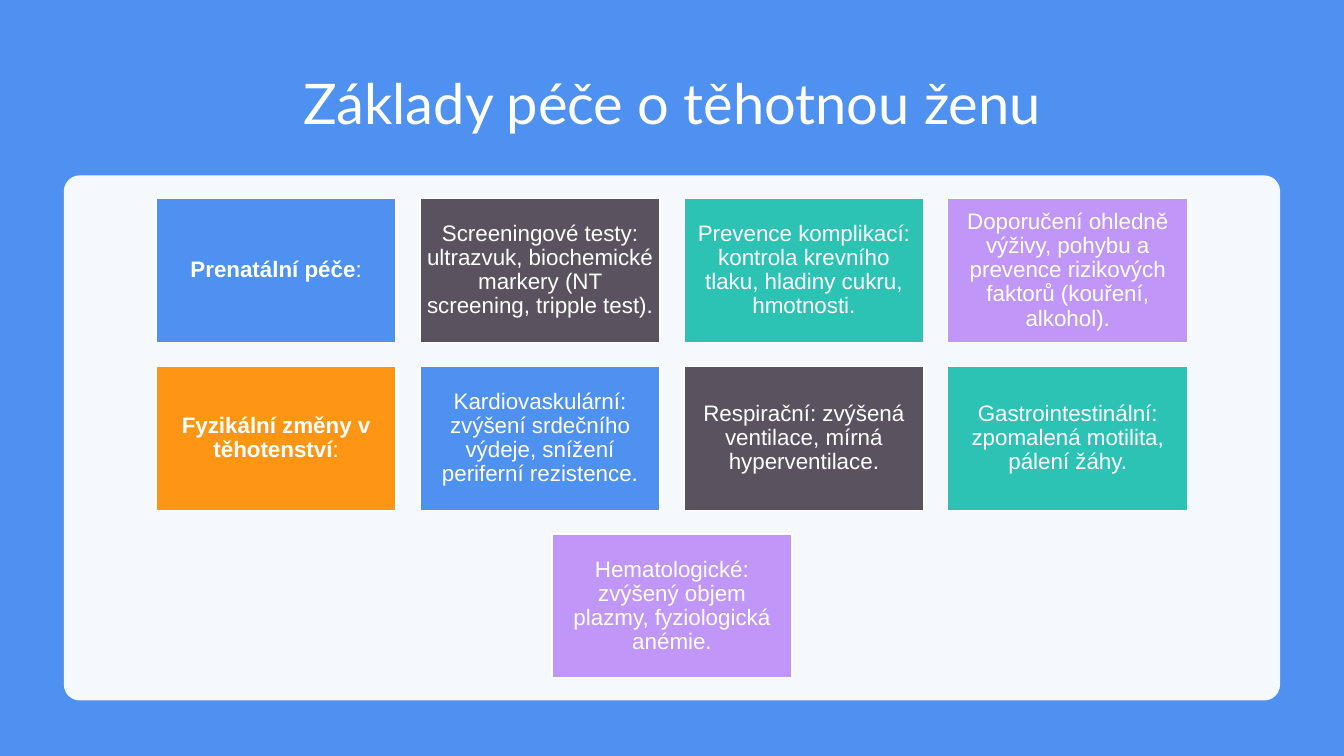
from itertools import cycle

from lxml.etree import SubElement
from pptx import Presentation
from pptx.dml.color import RGBColor
from pptx.enum.shapes import MSO_SHAPE as Shape
from pptx.enum.text import MSO_ANCHOR as Anchor, MSO_AUTO_SIZE as AutoSize, PP_ALIGN as Align
from pptx.oxml.ns import qn
from pptx.util import Cm, Pt

COLORS = {
    "white": "FFFFFF",
    "blue": "4E91F0",
    "slate": "5B5260",
    "teal": "2CC3B4",
    "violet": "C097F8",
    "orange": "FF9514",
}
WIDTH, HEIGHT = 33.87, 19.05

# Tile texts: (bold part, regular part)
TILES = [
    ("Prenatální péče", ":"),
    ("", "Screeningové testy: ultrazvuk, biochemické markery (NT screening, tripple test)."),
    ("", "Prevence komplikací: kontrola krevního tlaku, hladiny cukru, hmotnosti."),
    ("", "Doporučení ohledně výživy, pohybu a prevence rizikových faktorů (kouření, alkohol)."),
    ("Fyzikální změny v těhotenství", ":"),
    ("", "Kardiovaskulární: zvýšení srdečního výdeje, snížení periferní rezistence."),
    ("", "Respirační: zvýšená ventilace, mírná hyperventilace."),
    ("", "Gastrointestinální: zpomalená motilita, pálení žáhy."),
    ("", "Hematologické: zvýšený objem plazmy, fyziologická anémie."),
]
TILE_COLORS = ["blue", "slate", "teal", "violet", "orange"]
COLUMNS = 4
TILE_WIDTH, TILE_HEIGHT, GAP, TILES_TOP = 6.05, 3.63, 0.6, 5


def rgb(name):
    return RGBColor.from_string(COLORS[name])


class SlideBuilder:
    def __init__(self, slide):
        self.slide = slide

    def style(self, para, font, size):
        para.alignment = Align.CENTER
        para.line_spacing = 0.9
        for span in para.runs:
            span.font.name = font
            span.font.size = Pt(size)
            span.font.color.rgb = rgb("white")

    def title(self, text, left, top, width, height):
        box = self.slide.shapes.title
        box.left, box.top, box.width, box.height = map(Cm, (left, top, width, height))
        frame = box.text_frame
        frame.text = text
        frame.auto_size = AutoSize.NONE
        frame.vertical_anchor = Anchor.MIDDLE
        self.style(frame.paragraphs[0], "Lato", 40)

    def block(self, kind, color, left, top, width, height):
        box = self.slide.shapes.add_shape(kind, *map(Cm, (left, top, width, height)))
        box.shadow.inherit = False
        box.fill.solid()
        box.fill.fore_color.rgb = rgb(color)
        box.line.fill.background()
        return box

    def backdrop(self, color):
        box = self.block(Shape.RECTANGLE, color, 0, 0, WIDTH, HEIGHT)
        self.slide.shapes._spTree.insert(2, box._element)  # send to back

    def panel(self, left, top, width, height, opacity):
        box = self.block(Shape.ROUNDED_RECTANGLE, "white", left, top, width, height)
        box.adjustments[0] = 0.03
        color = box._element.spPr.find(qn("a:solidFill"))[0]
        SubElement(color, qn("a:alpha"), val=str(opacity * 1000))

    def tile(self, bold, regular, color, left, top):
        box = self.block(Shape.RECTANGLE, color, left, top, TILE_WIDTH, TILE_HEIGHT)
        box.line.color.rgb = rgb("white")
        box.line.width = Pt(1)
        frame = box.text_frame
        frame.word_wrap = True
        frame.vertical_anchor = Anchor.MIDDLE
        frame.margin_left = frame.margin_right = Cm(0.17)
        frame.margin_top = frame.margin_bottom = Cm(0.17)
        para = frame.paragraphs[0]
        for text, is_bold in ((bold, True), (regular, False)):
            if text:
                span = para.add_run()
                span.text = text
                span.font.bold = is_bold
        self.style(para, "Arial", 16)


def main():
    deck = Presentation()
    deck.slide_width, deck.slide_height = Cm(WIDTH), Cm(HEIGHT)
    page = SlideBuilder(deck.slides.add_slide(deck.slide_layouts[5]))

    # Background, title and panel
    page.backdrop("blue")
    page.title("Základy péče o těhotnou ženu", 2.33, 1.27, 29.21, 2.8)
    page.panel(1.61, 4.42, 30.65, 13.23, 95)

    # Tiles in centred rows
    colors = cycle(TILE_COLORS)
    for start in range(0, len(TILES), COLUMNS):
        row = TILES[start:start + COLUMNS]
        left = (WIDTH - len(row) * (TILE_WIDTH + GAP) + GAP) / 2
        top = TILES_TOP + start // COLUMNS * (TILE_HEIGHT + GAP)
        for column, (bold, regular) in enumerate(row):
            page.tile(bold, regular, next(colors), left + column * (TILE_WIDTH + GAP), top)

    deck.save("out.pptx")


if __name__ == "__main__":
    main()
